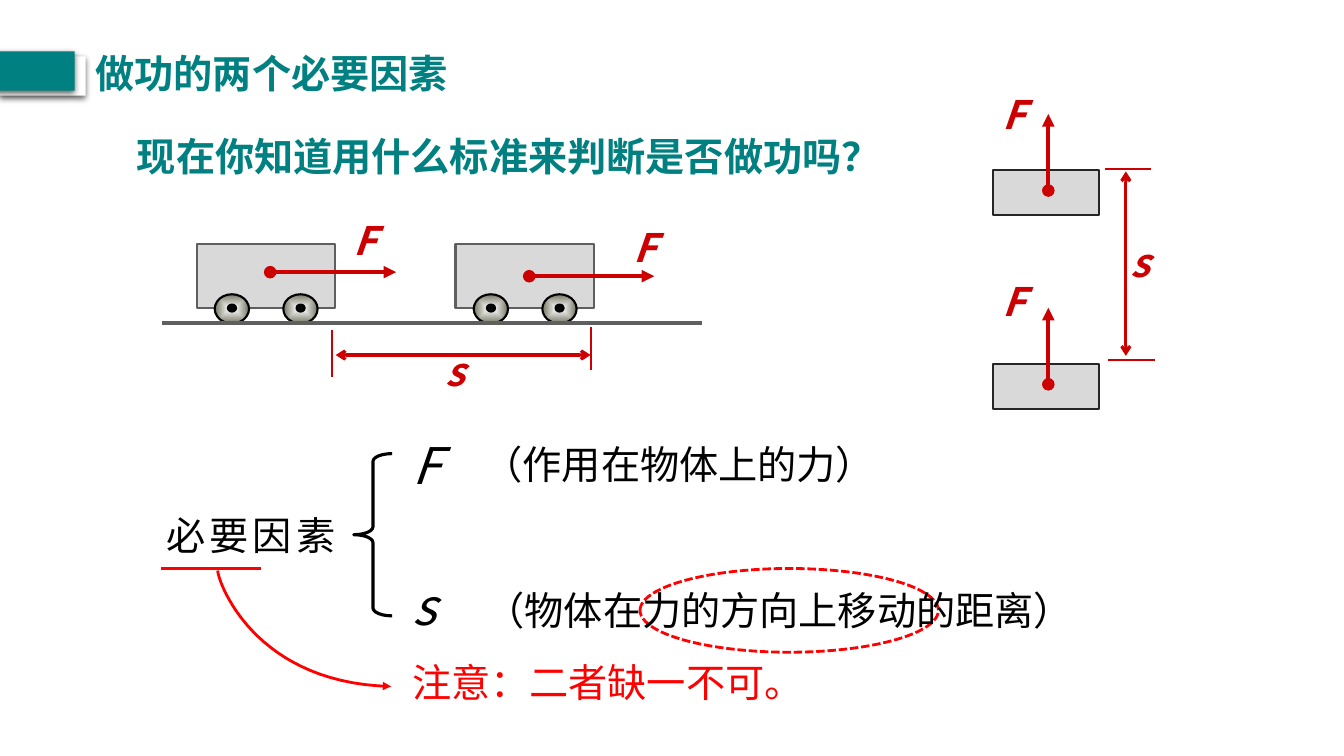
from lxml import etree
from pptx import Presentation
from pptx.dml.color import RGBColor
from pptx.enum.dml import MSO_LINE
from pptx.enum.shapes import MSO_CONNECTOR, MSO_SHAPE
from pptx.enum.text import MSO_AUTO_SIZE
from pptx.oxml import parse_xml
from pptx.oxml.ns import nsdecls, qn
from pptx.util import Pt

RECT = MSO_SHAPE.RECTANGLE
OVAL = MSO_SHAPE.OVAL
BRACE = MSO_SHAPE.LEFT_BRACE
STRAIGHT = MSO_CONNECTOR.STRAIGHT
SHORT_DASH = MSO_LINE.SQUARE_DOT
FIT_SHAPE = MSO_AUTO_SIZE.SHAPE_TO_FIT_TEXT
FONT = "Noto Sans CJK SC"
TEAL, DARK_RED, RED = "008080", "CC0000", "FF0000"
BLACK, WHITE, GREY, ROAD = "000000", "FFFFFF", "D9D9D9", "5F5F5F"

presentation = Presentation()
presentation.slide_width = Pt(960)
presentation.slide_height = Pt(540)
slide = presentation.slides.add_slide(presentation.slide_layouts[6])


def add_figure(kind, box, fill, outline, width=1.5):
    figure = slide.shapes.add_shape(kind, *map(Pt, box))
    figure.shadow.inherit = False
    if fill:
        figure.fill.solid()
        figure.fill.fore_color.rgb = RGBColor.from_string(fill)
    else:
        figure.fill.background()
    if outline:
        figure.line.color.rgb = RGBColor.from_string(outline)
        figure.line.width = Pt(width)
    else:
        figure.line.fill.background()
    return figure


def style_stroke(stroke, color, width, head, tail):
    stroke.line.color.rgb = RGBColor.from_string(color)
    stroke.line.width = Pt(width)
    properties = stroke.element.spPr
    outline = properties.find(qn("a:ln"))
    for end, arrowhead in (("a:headEnd", head), ("a:tailEnd", tail)):
        if arrowhead:
            etree.SubElement(outline, qn(end)).set("type", arrowhead)
    if properties.find(qn("a:effectLst")) is None:
        etree.SubElement(properties, qn("a:effectLst"))


for left, top, color in ((0, 40.3, WHITE), (-7.9, 36.7, TEAL)):
    title_bar = add_figure(RECT, (left, top, 61.2, 28.1), color, None)
    effects = title_bar.element.spPr.find(qn("a:effectLst"))
    effects.append(parse_xml(
        f'<a:outerShdw {nsdecls("a")} blurRad="{Pt(4.5)}" dist="{Pt(1.5)}" dir="5400000" '
        'algn="ctr" rotWithShape="0"><a:srgbClr val="000000"><a:alpha val="63000"/>'
        '</a:srgbClr></a:outerShdw>'))

for cart_left in (140.4, 325.4):
    add_figure(RECT, (cart_left, 174.2, 98.9, 46.1), GREY, ROAD)
    for wheel_left in (cart_left + 13, cart_left + 62):
        wheel = add_figure(OVAL, (wheel_left, 210.2, 24.5, 20.9), WHITE, BLACK)
        solid_fill = wheel.element.spPr.find(qn("a:solidFill"))
        solid_fill.getparent().replace(solid_fill, parse_xml(
            f'<a:gradFill {nsdecls("a")} rotWithShape="1"><a:gsLst>'
            '<a:gs pos="0"><a:srgbClr val="FFFFFF"/></a:gs>'
            '<a:gs pos="100000"><a:srgbClr val="767664"/></a:gs></a:gsLst>'
            '<a:path path="shape"><a:fillToRect l="50000" t="50000" r="50000" b="50000"/>'
            '</a:path></a:gradFill>'))
        add_figure(OVAL, (wheel_left + 9.4, 217.6, 5.8, 5), "000808", BLACK)

for block_top in (121.2, 259.9):
    add_figure(RECT, (709.2, block_top, 75.6, 32.4), GREY, "262626")

factor_brace = add_figure(BRACE, (252.7, 324, 27.4, 115.9), None, BLACK, 2.25)
factor_brace.adjustments[0] = 0.204
direction_ring = add_figure(OVAL, (457.2, 406.1, 213.1, 59.8), None, RED, 2)
direction_ring.line.dash_style = SHORT_DASH

strokes = [
    (116, 230.6, 501.8, 230.6, ROAD, 3, None, None),
    (236.9, 235.4, 236.9, 269.3, DARK_RED, 1.5, None, None),
    (421.9, 233.3, 421.9, 264.2, DARK_RED, 1.5, None, None),
    (239.8, 253.6, 421.9, 253.6, DARK_RED, 2.25, "arrow", "arrow"),
    (193, 194.4, 283, 194.4, DARK_RED, 3, "oval", "triangle"),
    (378, 197.3, 467.3, 197.3, DARK_RED, 3, "oval", "triangle"),
    (791.3, 257, 825.1, 257, DARK_RED, 1.5, None, None),
    (789.1, 121, 822.2, 121, DARK_RED, 1.5, None, None),
    (804.2, 254.2, 804.2, 122.4, DARK_RED, 2.25, "arrow", "arrow"),
    (748.8, 136.1, 748.8, 81.4, DARK_RED, 3, "oval", "triangle"),
    (748.8, 274.5, 748.8, 219.8, DARK_RED, 3, "oval", "triangle"),
    (115.2, 406.1, 186.5, 406.1, RED, 2.25, None, None),
]
for x1, y1, x2, y2, *style in strokes:
    stroke = slide.shapes.add_connector(STRAIGHT, Pt(x1), Pt(y1), Pt(x2), Pt(y2))
    style_stroke(stroke, *style)

bend = ((155.5, 407.5), (155.5, 414.7), (180.7, 488.2), (279.4, 490.3))
STEPS = 30
curve_points = []
for step in range(STEPS + 1):
    t = step / STEPS
    weights = ((1 - t) ** 3, 3 * t * (1 - t) ** 2, 3 * t ** 2 * (1 - t), t ** 3)
    curve_points.append(tuple(
        Pt(sum(weight * point[axis] for weight, point in zip(weights, bend)))
        for axis in (0, 1)))
curve_builder = slide.shapes.build_freeform(*curve_points[0])
curve_builder.add_line_segments(curve_points[1:], close=False)
note_curve = curve_builder.convert_to_shape()
note_curve.shadow.inherit = False
note_curve.fill.background()
style_stroke(note_curve, RED, 2, None, "triangle")

labels = [
    ("做功的两个必要因素", 61.2, 31.7, 269.3, 28, TEAL, True, False),
    ("现在你知道用什么标准来判断是否做功吗？", 90.7, 90.7, 609.1, 28, TEAL, True, False),
    ("F", 245.5, 151.2, 40.3, 28, DARK_RED, True, True),
    ("F", 445.7, 156.2, 40.3, 28, DARK_RED, True, True),
    ("s", 311, 244.8, 40.3, 28, DARK_RED, True, True),
    ("F", 709.2, 61.2, 31.7, 28, DARK_RED, True, True),
    ("F", 709.2, 194.4, 31.7, 28, DARK_RED, True, True),
    ("s", 800.6, 167, 33.8, 28, DARK_RED, True, True),
    ("必要因素", 111.6, 361.4, 139, 28, BLACK, False, False),
    ("F", 287.3, 306.7, 56.2, 36, BLACK, False, True),
    ("（作用在物体上的力）", 338.4, 311, 404.6, 28, BLACK, False, False),
    ("s", 287.3, 407.5, 52.6, 36, BLACK, False, True),
    ("（物体在力的方向上移动的距离）", 339.8, 415.4, 581.8, 28, BLACK, False, False),
    ("注意：二者缺一不可。", 287.3, 466.6, 303.8, 28, RED, False, False),
]
for wording, left, top, width, size, color, bold, italic in labels:
    height = 41 if size == 28 else 51.1
    label = slide.shapes.add_textbox(Pt(left), Pt(top), Pt(width), Pt(height))
    frame = label.text_frame
    frame.word_wrap = True
    frame.auto_size = FIT_SHAPE
    frame.text = wording
    run = frame.paragraphs[0].runs[0]
    run.font.size = Pt(size)
    run.font.bold = bold
    run.font.italic = italic
    run.font.color.rgb = RGBColor.from_string(color)
    run.font.name = FONT
    run_properties = run.font._element
    etree.SubElement(run_properties, qn("a:ea")).set("typeface", FONT)
    if wording == "必要因素":
        run_properties.set("spc", "300")

presentation.save("out.pptx")
